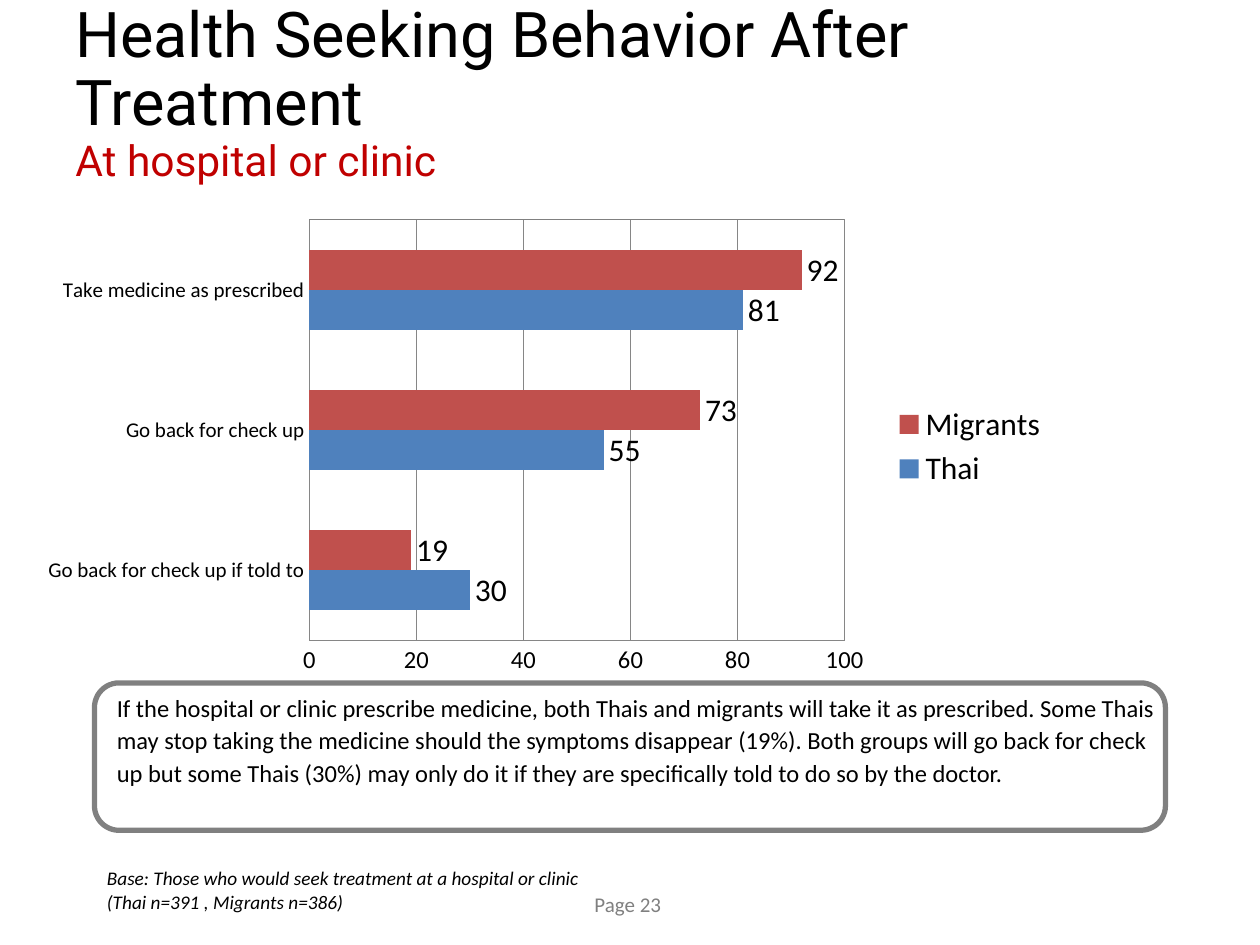
from dataclasses import dataclass

import lxml.etree
import pptx
import pptx.chart.data
import pptx.dml.color
import pptx.enum.chart
import pptx.enum.shapes
import pptx.enum.text
import pptx.oxml
import pptx.oxml.ns
import pptx.util

Inches = pptx.util.Inches
Pt = pptx.util.Pt
qn = pptx.oxml.ns.qn


@dataclass(frozen=True)
class Theme:
    ink: str = "000000"
    accent: str = "C00000"
    muted: str = "808080"
    grid: str = "868686"
    heading_font: str = "Roboto"
    body_font: str = "Calibri"
    title: float = 36
    subtitle: float = 24.3
    chart: float = 18
    body: float = 14
    small: float = 12
    note: float = 11


@dataclass(frozen=True)
class Box:
    left: float
    top: float
    width: float
    height: float

    def lengths(self) -> tuple:
        return tuple(map(Inches, (self.left, self.top, self.width, self.height)))


@dataclass(frozen=True)
class Group:
    name: str
    percentages: tuple
    color: str


THEME = Theme()
ANSWERS = ("Go back for check up if told to", "Go back for check up", "Take medicine as prescribed")
GROUPS = (
    Group("Thai", (30, 55, 81), "4F81BD"),
    Group("Migrants", (19, 73, 92), "C0504D"),
)
FINDING = (
    "If the hospital or clinic prescribe medicine, both Thais and migrants will take it as prescribed. "
    "Some Thais may stop taking the medicine should the symptoms disappear (19%). "
    "Both groups will go back for check up but some Thais (30%) may only do it "
    "if they are specifically told to do so by the doctor."
)
PLOT_LAYOUT = {"x": 0.27, "y": 0.02, "w": 0.52, "h": 0.89}


def rgb(color: str) -> pptx.dml.color.RGBColor:
    return pptx.dml.color.RGBColor.from_string(color)


def set_font(font, size: float, color: str = THEME.ink, name: str = THEME.body_font) -> None:
    font.size = Pt(size)
    font.name = name
    font.color.rgb = rgb(color)


def add_note(slide, box: Box, lines: tuple, size: float, color: str, italic: bool = False) -> None:
    frame = slide.shapes.add_textbox(*box.lengths()).text_frame
    frame.word_wrap = False
    frame.auto_size = pptx.enum.text.MSO_AUTO_SIZE.SHAPE_TO_FIT_TEXT
    frame.text = "\n".join(lines)
    for paragraph in frame.paragraphs:
        set_font(paragraph.font, size, color)
        paragraph.font.italic = italic


def add_title(slide, box: Box, title: str, subtitle: str) -> None:
    frame = slide.shapes.add_textbox(*box.lengths()).text_frame
    frame.word_wrap = True
    frame.vertical_anchor = pptx.enum.text.MSO_ANCHOR.MIDDLE
    heading = frame.paragraphs[0]
    heading.line_spacing = 0.9
    title_run = heading.add_run()
    title_run.text = title
    set_font(title_run.font, THEME.title, THEME.ink, THEME.heading_font)
    heading.add_line_break()
    subtitle_run = heading.add_run()
    subtitle_run.text = subtitle
    set_font(subtitle_run.font, THEME.subtitle, THEME.accent, THEME.heading_font)


def add_finding(slide, box: Box, text: str) -> None:
    panel = slide.shapes.add_shape(pptx.enum.shapes.MSO_SHAPE.ROUNDED_RECTANGLE, *box.lengths())
    panel.shadow.inherit = False
    panel.fill.background()
    panel.line.color.rgb = rgb(THEME.muted)
    panel.line.width = Pt(3)
    frame = panel.text_frame
    frame.word_wrap = True
    frame.vertical_anchor = pptx.enum.text.MSO_ANCHOR.TOP
    frame.margin_left = frame.margin_top = frame.margin_right = frame.margin_bottom = 0
    frame.text = text
    paragraph = frame.paragraphs[0]
    paragraph.alignment = pptx.enum.text.PP_ALIGN.LEFT
    paragraph.line_spacing = 1.1
    paragraph._p.get_or_add_pPr().set("marL", str(Inches(0.12)))
    set_font(paragraph.font, THEME.body)


def place_plot(chart) -> None:
    plot_area = chart._chartSpace.chart.plotArea
    for previous in plot_area.findall(qn("c:layout")):
        plot_area.remove(previous)
    layout = lxml.etree.Element(qn("c:layout"))
    manual = lxml.etree.SubElement(layout, qn("c:manualLayout"))
    settings = {"layoutTarget": "inner", "xMode": "edge", "yMode": "edge", **PLOT_LAYOUT}
    for tag, value in settings.items():
        lxml.etree.SubElement(manual, qn(f"c:{tag}")).set("val", str(value))
    plot_area.insert(0, layout)
    frame = lxml.etree.SubElement(plot_area, qn("c:spPr"))
    lxml.etree.SubElement(frame, qn("a:noFill"))
    outline = lxml.etree.SubElement(frame, qn("a:ln"), w=str(Pt(0.75)))
    fill = lxml.etree.SubElement(outline, qn("a:solidFill"))
    lxml.etree.SubElement(fill, qn("a:srgbClr"), val=THEME.muted)


def add_behavior_chart(slide, box: Box) -> None:
    data = pptx.chart.data.CategoryChartData()
    data.categories = ANSWERS
    for group in GROUPS:
        data.add_series(group.name, group.percentages)
    chart = slide.shapes.add_chart(
        pptx.enum.chart.XL_CHART_TYPE.BAR_CLUSTERED, *box.lengths(), data
    ).chart
    set_font(chart.font, THEME.chart)
    chart.has_title = False
    chart.has_legend = True
    chart.legend.position = pptx.enum.chart.XL_LEGEND_POSITION.RIGHT
    chart.legend.include_in_layout = False
    set_font(chart.legend.font, THEME.chart)

    for axis, size in ((chart.category_axis, THEME.small), (chart.value_axis, THEME.body)):
        axis.major_tick_mark = axis.minor_tick_mark = pptx.enum.chart.XL_TICK_MARK.NONE
        axis.format.line.color.rgb = rgb(THEME.grid)
        set_font(axis.tick_labels.font, size)
    percent_axis = chart.value_axis
    percent_axis.minimum_scale = 0
    percent_axis.maximum_scale = 100
    percent_axis.major_unit = 20
    percent_axis.has_major_gridlines = True
    percent_axis.major_gridlines.format.line.color.rgb = rgb(THEME.grid)

    plot = chart.plots[0]
    plot.gap_width = 150
    plot.overlap = 0
    plot.vary_by_categories = False
    for series, group in zip(plot.series, GROUPS):
        series.format.fill.solid()
        series.format.fill.fore_color.rgb = rgb(group.color)
        series.data_labels.show_value = True
        series.data_labels.position = pptx.enum.chart.XL_LABEL_POSITION.OUTSIDE_END
        set_font(series.data_labels.font, THEME.chart)
    place_plot(chart)


def main() -> None:
    deck = pptx.Presentation()
    deck.slide_width = Inches(10)
    deck.slide_height = Inches(7.5)
    slide = deck.slides.add_slide(deck.slide_layouts[6])
    add_note(slide, Box(4.62, 7.03, 0.77, 0.3), ("Page 23",), THEME.small, THEME.muted)
    add_finding(slide, Box(0.75, 5.42, 8.5, 1.17), FINDING)
    add_title(slide, Box(0.5, 0.25, 9, 1), "Health Seeking Behavior After Treatment", "At hospital or clinic")
    add_behavior_chart(slide, Box(0.25, 1.67, 8.17, 3.75))
    base = ("Base: Those who would seek treatment at a hospital or clinic", "(Thai n=391 , Migrants n=386)")
    add_note(slide, Box(0.75, 6.83, 4, 0.47), base, THEME.note, THEME.ink, italic=True)
    deck.save("out.pptx")


if __name__ == "__main__":
    main()
